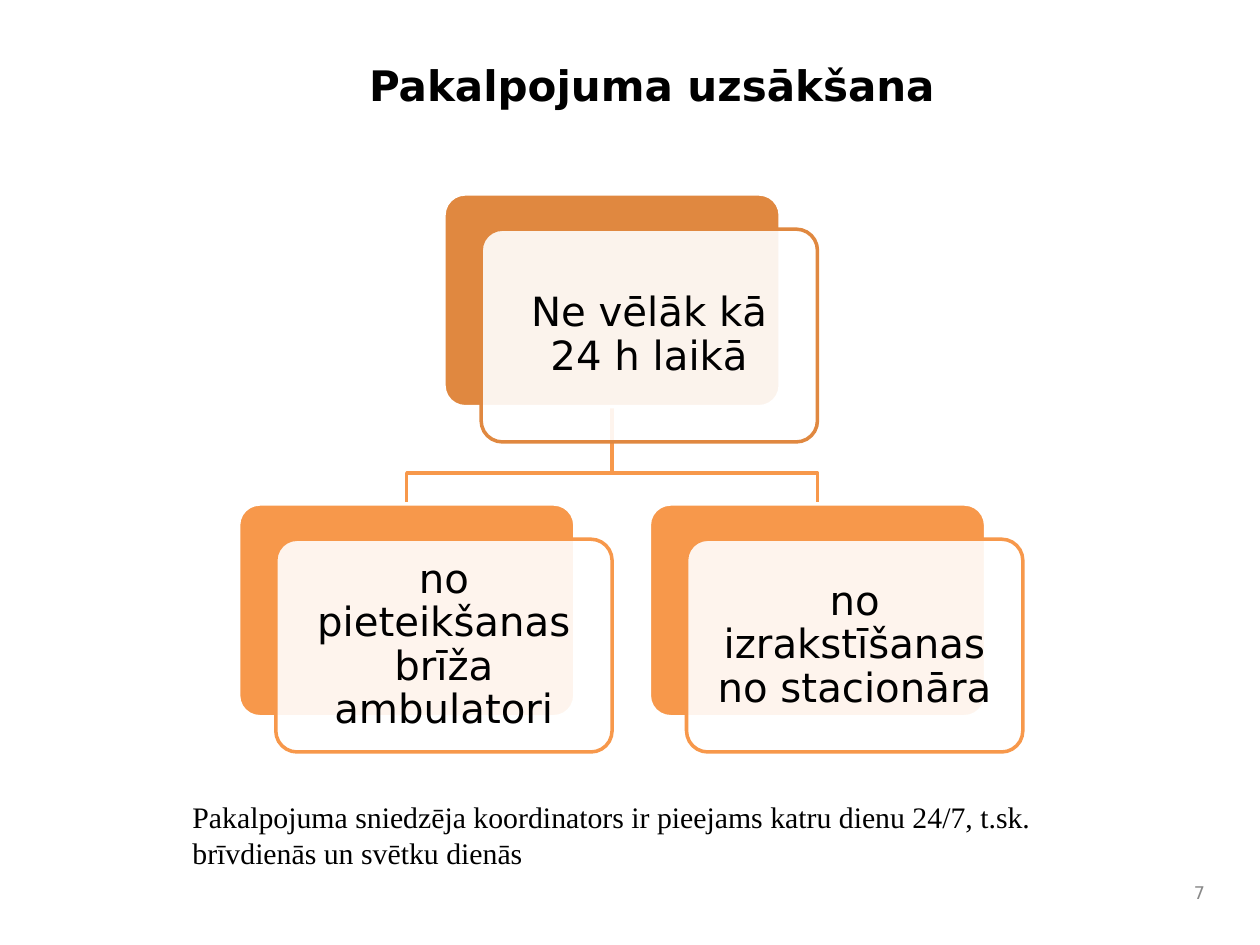
import pptx
import pptx.dml.color
import pptx.enum.shapes
import pptx.enum.text
import pptx.oxml
import pptx.oxml.ns
import pptx.util

Cm = pptx.util.Cm
Pt = pptx.util.Pt
ALIGN = pptx.enum.text.PP_ALIGN
ANCHOR = pptx.enum.text.MSO_ANCHOR

COLOURS = {
    "text": "000000",
    "number": "898989",
    "white": "FFFFFF",
    "parent": "E08840",
    "child": "F7984B",
}
SANS = "DejaVu Sans"
SERIF = "Times New Roman"

CARD_WIDTH, CARD_HEIGHT = 6.78, 4.29
SHIFT_X, SHIFT_Y = 0.75, 0.71
TEXT_INSET = 0.13
LEVEL_STEP = 6.25
CHILD_GAP = 2 * SHIFT_X


def colour(name):
    return pptx.dml.color.RGBColor.from_string(COLOURS[name])


def add_text(page, text, box, size=23, font=SANS, color="text", bold=False,
             align=ALIGN.LEFT, anchor=ANCHOR.TOP, spacing=None, margin_y=0.13):
    shape = page.shapes.add_textbox(*(Cm(length) for length in box))
    frame = shape.text_frame
    frame.word_wrap = True
    frame.vertical_anchor = anchor
    frame.margin_left = frame.margin_right = Cm(0.25)
    frame.margin_top = frame.margin_bottom = Cm(margin_y)
    para = frame.paragraphs[0]
    para.alignment = align
    para.line_spacing = spacing
    span = para.add_run()
    span.text = text
    span.font.name = font
    span.font.size = Pt(size)
    span.font.bold = bold
    span.font.color.rgb = colour(color)


def add_panel(page, box, fill, line, opacity=100):
    """Rounded rectangle with a 2 pt outline; opacity in percent."""
    panel = page.shapes.add_shape(
        pptx.enum.shapes.MSO_SHAPE.ROUNDED_RECTANGLE,
        *(Cm(length) for length in box))
    panel.adjustments[0] = 0.1
    panel.shadow.inherit = False
    panel.fill.solid()
    panel.fill.fore_color.rgb = colour(fill)
    panel.line.color.rgb = colour(line)
    panel.line.width = Pt(2)
    if opacity < 100:
        fill_color = panel.fill._xPr.find(
            pptx.oxml.ns.qn("a:solidFill")).find(pptx.oxml.ns.qn("a:srgbClr"))
        alpha = pptx.oxml.parse_xml(
            f'<a:alpha {pptx.oxml.ns.nsdecls("a")} val="{opacity * 1000}"/>')
        fill_color.append(alpha)


def add_card(page, left, top, text, color):
    """Solid panel with a translucent labelled panel shifted over it."""
    add_panel(page, (left, top, CARD_WIDTH, CARD_HEIGHT), color, "white")
    left, top = left + SHIFT_X, top + SHIFT_Y
    add_panel(page, (left, top, CARD_WIDTH, CARD_HEIGHT), "white", color, 90)
    label_box = (left + TEXT_INSET, top + TEXT_INSET,
                 CARD_WIDTH - 2 * TEXT_INSET, CARD_HEIGHT - 2 * TEXT_INSET)
    add_text(page, text, label_box, align=ALIGN.CENTER, anchor=ANCHOR.MIDDLE,
             spacing=0.9, margin_y=0.25)


def add_branch(page, start_x, start_y, end_x, end_y):
    """Elbow line that turns two thirds of the way down."""
    turn_y = start_y + (end_y - start_y) * 0.68
    builder = page.shapes.build_freeform(Cm(start_x), Cm(start_y))
    builder.add_line_segments(
        [(Cm(x), Cm(y)) for x, y in
         ((start_x, turn_y), (end_x, turn_y), (end_x, end_y))], close=False)
    branch = builder.convert_to_shape()
    branch.shadow.inherit = False
    branch.fill.background()
    branch.line.color.rgb = colour("child")
    branch.line.width = Pt(2)


def add_hierarchy(page, left, top, parent, children):
    step = CARD_WIDTH + CHILD_GAP
    child_lefts = [left + i * step for i in range(len(children))]
    child_top = top + LEVEL_STEP
    parent_left = (child_lefts[0] + child_lefts[-1]) / 2
    half = CARD_WIDTH / 2
    for child_left in reversed(child_lefts):
        add_branch(page, parent_left + half, top + CARD_HEIGHT,
                   child_left + half, child_top)
    add_card(page, parent_left, top, parent, "parent")
    for child_left, child in zip(child_lefts, children):
        add_card(page, child_left, child_top, child, "child")


def main():
    deck = pptx.Presentation()
    deck.slide_width, deck.slide_height = Cm(25.4), Cm(19.05)
    page = deck.slides.add_slide(deck.slide_layouts[6])

    add_text(page, "Pakalpojuma uzsākšana", (7.19, 1.07, 16.94, 2.87),
             size=24, bold=True)
    add_hierarchy(page, 4.81, 3.91, "Ne vēlāk kā 24 h laikā",
                  ["no pieteikšanas brīža ambulatori",
                   "no izrakstīšanas no stacionāra"])
    add_text(page, "Pakalpojuma sniedzēja koordinators ir pieejams katru dienu "
             "24/7, t.sk. brīvdienās un svētku dienās",
             (3.63, 15.98, 18.97, 1.7), size=17, font=SERIF)
    add_text(page, "7", (23.7, 17.58, 0.84, 0.84), size=10, color="number",
             align=ALIGN.RIGHT, anchor=ANCHOR.MIDDLE)
    deck.save("out.pptx")


if __name__ == "__main__":
    main()
